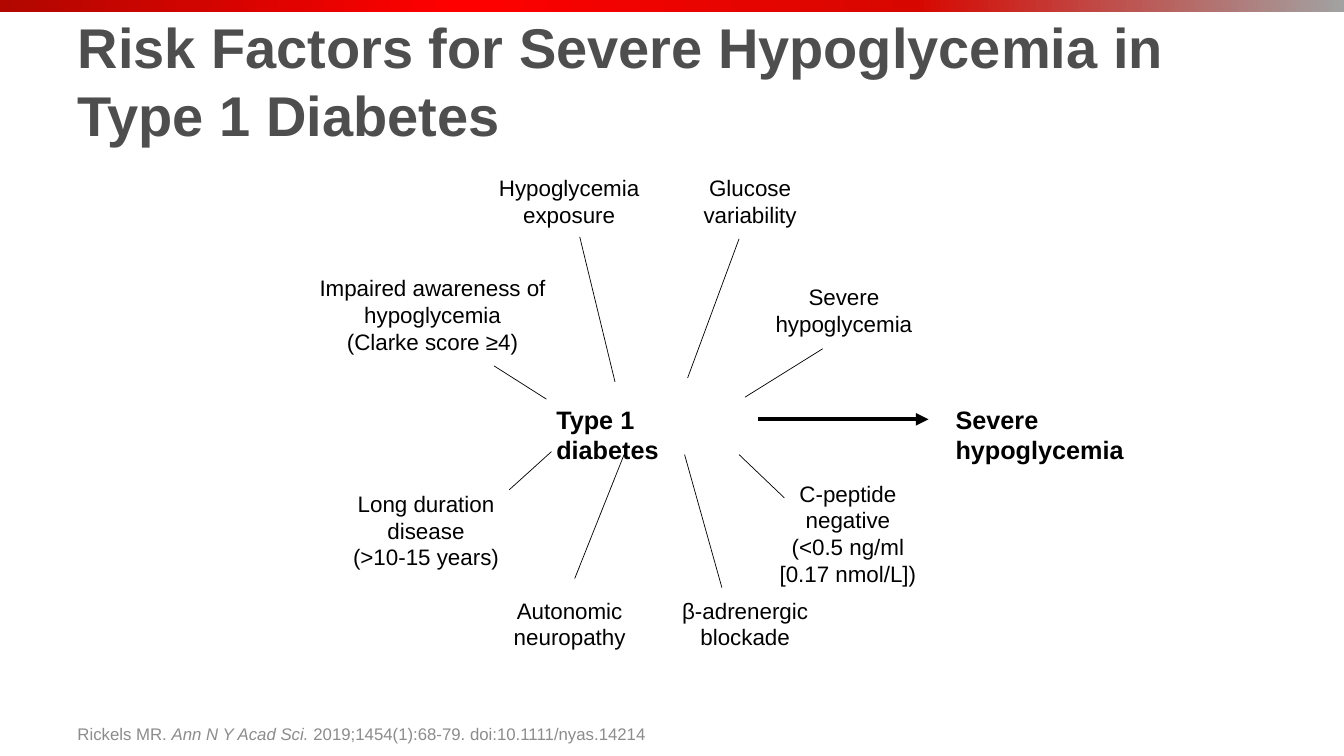
import pptx
import pptx.util
import pptx.dml.color
import pptx.enum.shapes
import pptx.enum.text
import pptx.oxml
import pptx.oxml.ns
import lxml.etree

Inches = pptx.util.Inches
Align = pptx.enum.text.PP_ALIGN
Anchor = pptx.enum.text.MSO_ANCHOR
COLORS = {"text": "000000", "title": "4D4E4D", "citation": "8C8C8C"}
BAND_STOPS = [(0, "B10700"), (14, "D00400"), (34, "FF0000"), (68, "D70700"), (100, "A2A2A2")]

deck = pptx.Presentation()
deck.slide_width, deck.slide_height = Inches(13.33), Inches(7.5)
slide = deck.slides.add_slide(deck.slide_layouts[5])


def write(paragraphs, box, holder=None, size=16, color="text", bold=False,
          align=Align.LEFT, anchor=Anchor.TOP):
    left, top, width, height = map(Inches, box)
    if holder is None:
        holder = slide.shapes.add_textbox(left, top, width, height)
    holder.left, holder.top, holder.width, holder.height = left, top, width, height
    frame = holder.text_frame
    frame.word_wrap = True
    frame.auto_size = pptx.enum.text.MSO_AUTO_SIZE.NONE
    frame.vertical_anchor = anchor
    for index, runs in enumerate(paragraphs):
        paragraph = frame.add_paragraph() if index else frame.paragraphs[0]
        paragraph.alignment = align
        for words, italic in runs:
            run = paragraph.add_run()
            run.text = words
            run.font.name = "Arial"
            run.font.size = pptx.util.Pt(size)
            run.font.bold = bold
            run.font.italic = italic
            run.font.color.rgb = pptx.dml.color.RGBColor.from_string(COLORS[color])


def draw_line(start, end, weight):
    line = slide.shapes.add_connector(pptx.enum.shapes.MSO_CONNECTOR.STRAIGHT,
                                      *map(Inches, start + end))
    line.line.color.rgb = pptx.dml.color.RGBColor.from_string(COLORS["text"])
    line.line.width = pptx.util.Pt(weight)
    lxml.etree.SubElement(line._element.spPr, pptx.oxml.ns.qn("a:effectLst"))
    return line


band = slide.shapes.add_shape(pptx.enum.shapes.MSO_SHAPE.RECTANGLE,
                              0, 0, deck.slide_width, Inches(0.12))
band.shadow.inherit = False
band.line.fill.background()
band.fill.gradient()
band.fill.gradient_angle = 0
stop_list = band._element.spPr.find(".//" + pptx.oxml.ns.qn("a:gsLst"))
for stop in list(stop_list):
    stop_list.remove(stop)
for position, shade in BAND_STOPS:
    stop = lxml.etree.SubElement(stop_list, pptx.oxml.ns.qn("a:gs"), pos=str(position * 1000))
    lxml.etree.SubElement(stop, pptx.oxml.ns.qn("a:srgbClr"), val=shade)

write([[("Risk Factors for Severe Hypoglycemia in Type 1 Diabetes", False)]],
      (0.67, 0.07, 11.75, 1.45), holder=slide.shapes.title, size=40, color="title",
      bold=True, anchor=Anchor.MIDDLE)

for stage, box in [("Type 1 diabetes", (5.42, 3.96, 1.83, 0.4)),
                   ("Severe hypoglycemia", (9.38, 3.96, 2.4, 0.4))]:
    write([[(stage, False)]], box, size=18, bold=True)

risk_factors = [
    (["Hypoglycemia exposure"], (4.83, 1.68, 1.63, 0.64), (5.75, 2.35), (6.1, 3.79)),
    (["Glucose variability"], (6.62, 1.68, 1.64, 0.64), (7.33, 2.37), (6.82, 3.75)),
    (["Severe hypoglycemia"], (7.52, 2.76, 1.7, 0.64), (8.16, 3.46), (7.39, 3.94)),
    (["C-peptide negative", "(<0.5 ng/ml", "[0.17 nmol/L])"],
     (7.61, 4.71, 1.6, 1.18), (7.78, 4.94), (7.33, 4.51)),
    (["β-adrenergic blockade"], (6.6, 5.87, 1.58, 0.64), (7.16, 5.83), (6.79, 4.51)),
    (["Autonomic neuropathy"], (4.96, 5.87, 1.38, 0.64), (5.7, 5.74), (6.19, 4.51)),
    (["Long duration disease", "(>10-15 years)"],
     (3.27, 4.81, 1.91, 0.91), (5.05, 4.86), (5.47, 4.48)),
    (["Impaired awareness of hypoglycemia", "(Clarke score ≥4)"],
     (2.92, 2.67, 2.74, 0.91), (4.9, 3.63), (5.42, 3.96)),
]
for factor, box, outer, inner in risk_factors:
    write([[(words, False)] for words in factor], box, align=Align.CENTER)
    draw_line(outer, inner, 0.5)

outcome_arrow = draw_line((7.52, 4.16), (9.21, 4.16), 3)
lxml.etree.SubElement(outcome_arrow.line._get_or_add_ln(),
                      pptx.oxml.ns.qn("a:tailEnd"), type="triangle")

write([[("Rickels MR. ", False), ("Ann N Y Acad Sci. ", True),
        ("2019;1454(1):68-79. doi:10.1111/nyas.14214", False)]],
      (0.67, 6.95, 9.86, 0.48), size=12, color="citation", anchor=Anchor.BOTTOM)

deck.save("out.pptx")
